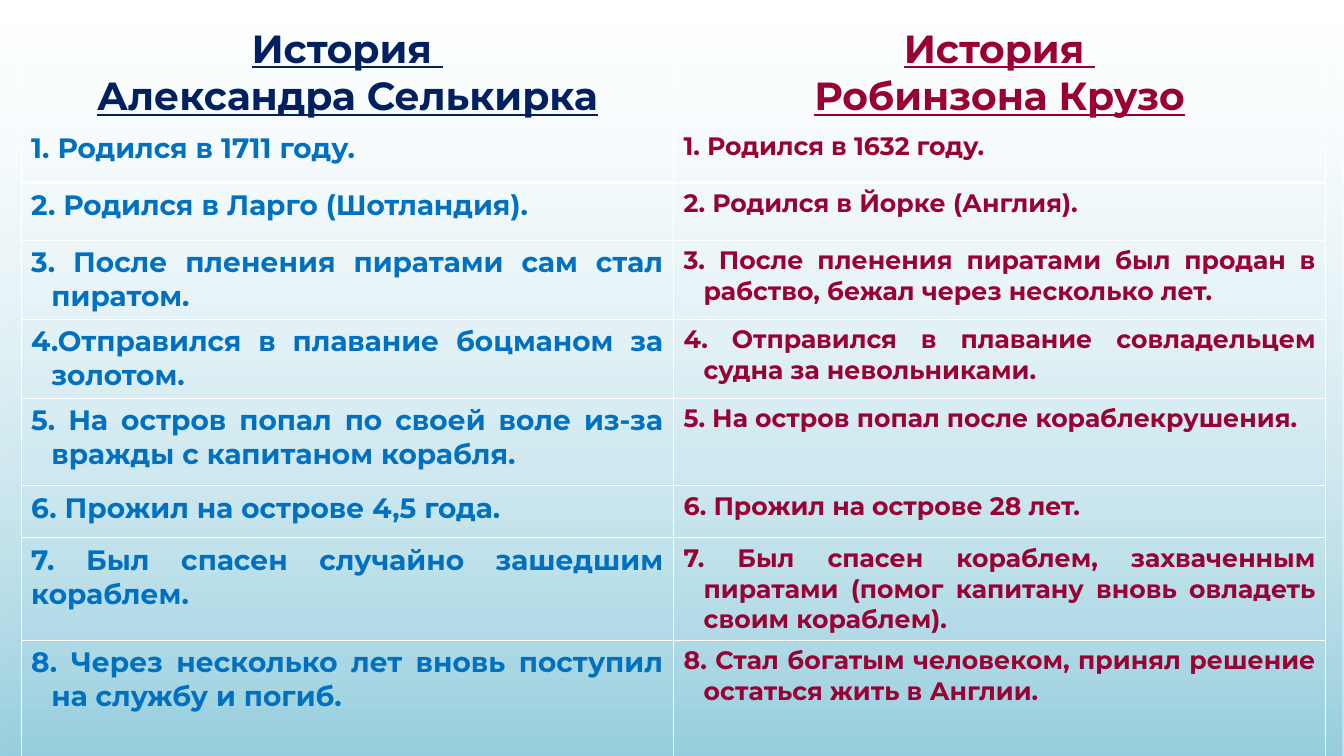
from dataclasses import dataclass

from lxml import etree
from pptx import Presentation
from pptx.dml.color import RGBColor
from pptx.enum.shapes import MSO_SHAPE
from pptx.enum.text import MSO_ANCHOR, PP_ALIGN
from pptx.oxml.ns import qn
from pptx.util import Inches, Pt

RECTANGLE = MSO_SHAPE.RECTANGLE
CENTER, JUSTIFY = PP_ALIGN.CENTER, PP_ALIGN.JUSTIFY
TOP, MIDDLE = MSO_ANCHOR.TOP, MSO_ANCHOR.MIDDLE

SLIDE_W, SLIDE_H = 13.33, 7.5
TABLE_BOX = (0.21, 0.2, 12.94, 7.27)
ROW_HEIGHTS = (0.84, 0.55, 0.55, 0.76, 0.76, 0.84, 0.5, 0.98, 1.26)
HANGING = 0.2


@dataclass(frozen=True)
class Theme:
    font: str = "Montserrat"
    heading_size: int = 28
    selkirk_size: int = 20
    crusoe_size: int = 18
    selkirk_heading: str = "002060"
    selkirk: str = "0070C0"
    crusoe: str = "990033"
    border: str = "FFFFFF"
    # position, colour, opacity in percent
    backdrop: tuple = ((0, "7DC2D6", 80), (0.99, "D4EBF1", 0))


THEME = Theme()

HEADINGS = (
    (("История ", "Александра Селькирка"), THEME.selkirk_heading),
    (("История ", "Робинзона Крузо"), THEME.crusoe),
)
FACTS = (
    ("1. Родился в 1711 году.", "1. Родился в 1632 году."),
    ("2. Родился в Ларго (Шотландия).", "2. Родился в Йорке (Англия)."),
    ("3. После пленения пиратами сам стал пиратом.",
     "3. После пленения пиратами был продан в рабство, бежал через несколько лет."),
    ("4.Отправился в плавание боцманом за золотом.",
     "4. Отправился в плавание совладельцем судна за невольниками."),
    ("5. На остров попал по своей воле из-за вражды с капитаном корабля.",
     "5. На остров попал после кораблекрушения."),
    ("6. Прожил на острове 4,5 года.", "6. Прожил на острове 28 лет."),
    ("7. Был спасен случайно зашедшим кораблем.",
     "7. Был спасен кораблем, захваченным пиратами "
     "(помог капитану вновь овладеть своим кораблем)."),
    ("8. Через несколько лет вновь поступил на службу и погиб.",
     "8. Стал богатым человеком, принял решение остаться жить в Англии."),
)
FLUSH_CELLS = {(7, 0)}  # row and column of facts without a hanging indent
FACT_STYLES = (
    {"size": THEME.selkirk_size, "color": THEME.selkirk},
    {"size": THEME.crusoe_size, "color": THEME.crusoe},
)


def write_text(frame, lines, *, size, color, align=JUSTIFY, underline=False, hanging=0):
    for index, line in enumerate(lines):
        paragraph = frame.paragraphs[0] if index == 0 else frame.add_paragraph()
        paragraph.alignment = align
        if hanging:
            properties = paragraph._p.get_or_add_pPr()
            properties.set("marL", str(Inches(hanging)))
            properties.set("indent", str(-Inches(hanging)))
        run = paragraph.add_run()
        run.text = line
        font = run.font
        font.name, font.size, font.bold = THEME.font, Pt(size), True
        font.underline = underline
        font.color.rgb = RGBColor.from_string(color)


def format_cell(cell, anchor):
    """Give the cell thin borders on all sides and leave it unfilled."""
    properties = cell._tc.get_or_add_tcPr()
    for side in ("lnL", "lnR", "lnT", "lnB"):
        line = etree.SubElement(properties, qn(f"a:{side}"), w=str(Pt(1)))
        fill = etree.SubElement(line, qn("a:solidFill"))
        etree.SubElement(fill, qn("a:srgbClr"), val=THEME.border)
    cell.fill.background()
    cell.vertical_anchor = anchor


def add_backdrop(slide, box):
    backdrop = slide.shapes.add_shape(RECTANGLE, *map(Inches, box))
    backdrop.shadow.inherit = False
    backdrop.line.fill.background()
    backdrop.fill.gradient()
    backdrop.fill.gradient_angle = 90
    for stop, (position, color, opacity) in zip(backdrop.fill.gradient_stops, THEME.backdrop):
        stop.position = position
        stop.color.rgb = RGBColor.from_string(color)
        color_element = stop._gs.find(qn("a:srgbClr"))
        etree.SubElement(color_element, qn("a:alpha"), val=str(opacity * 1000))


def add_comparison(slide, box):
    left, top, width, height = map(Inches, box)
    table = slide.shapes.add_table(
        len(ROW_HEIGHTS), len(HEADINGS), left, top, width, height).table
    table.first_row = table.horz_banding = False
    for column in table.columns:
        column.width = width // len(HEADINGS)
    for row, share in zip(table.rows, ROW_HEIGHTS):
        row.height = int(height * share / sum(ROW_HEIGHTS))

    for col, (lines, color) in enumerate(HEADINGS):
        cell = table.cell(0, col)
        format_cell(cell, MIDDLE)
        write_text(cell.text_frame, lines, size=THEME.heading_size, color=color,
                   align=CENTER, underline=True)
    for row, facts in enumerate(FACTS, start=1):
        for col, (fact, style) in enumerate(zip(facts, FACT_STYLES)):
            cell = table.cell(row, col)
            format_cell(cell, TOP)
            hanging = 0 if (row, col) in FLUSH_CELLS else HANGING
            write_text(cell.text_frame, [fact], hanging=hanging, **style)


def main():
    presentation = Presentation()
    presentation.slide_width = Inches(SLIDE_W)
    presentation.slide_height = Inches(SLIDE_H)
    slide = presentation.slides.add_slide(presentation.slide_layouts[6])
    add_backdrop(slide, (0, 0, SLIDE_W, SLIDE_H))
    add_comparison(slide, TABLE_BOX)
    presentation.save("out.pptx")


if __name__ == "__main__":
    main()
